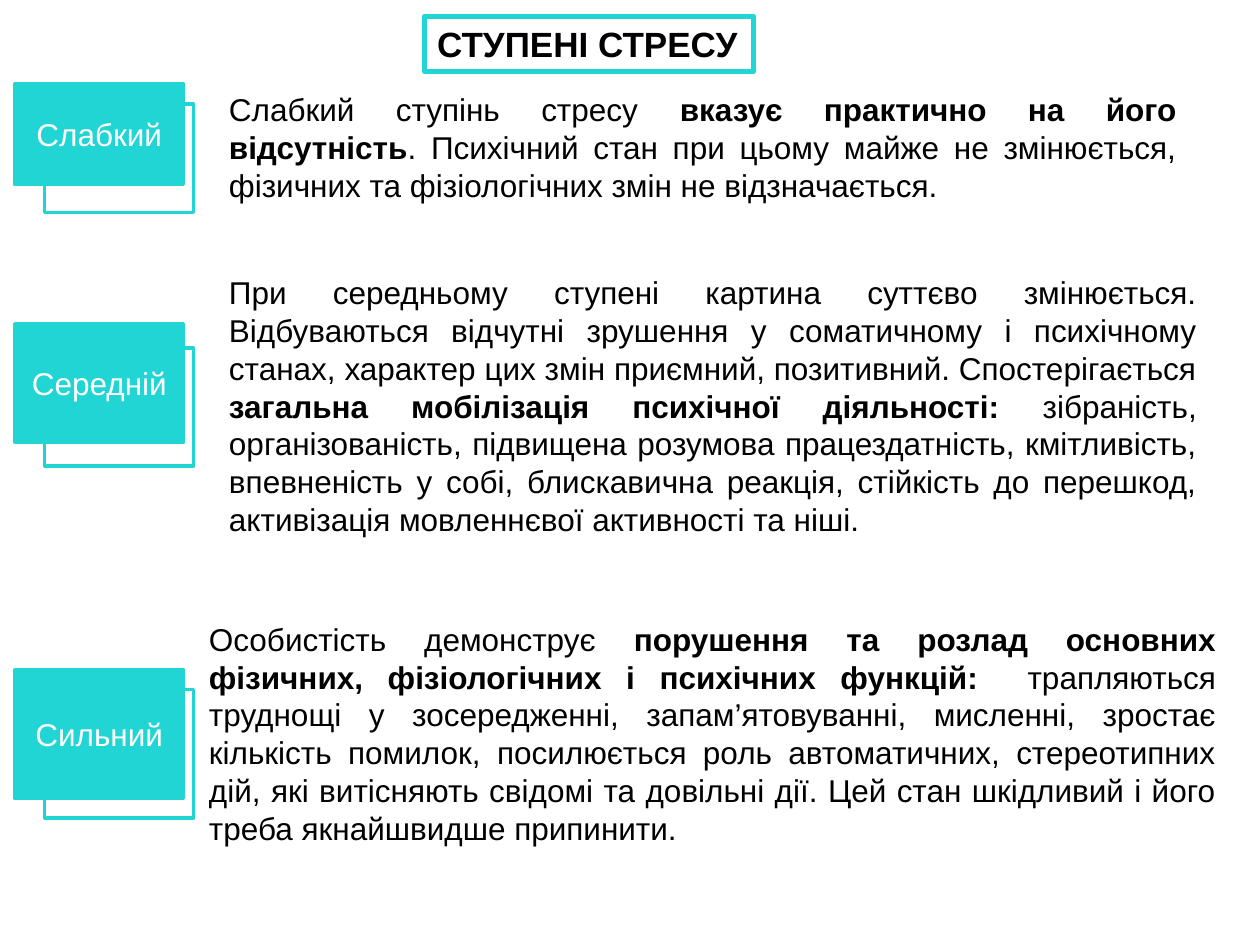
from dataclasses import dataclass

from pptx import Presentation
from pptx.dml.color import RGBColor
from pptx.enum.shapes import MSO_SHAPE
from pptx.enum.text import MSO_ANCHOR, MSO_AUTO_SIZE, PP_ALIGN
from pptx.slide import Slide
from pptx.util import Pt

RECTANGLE = MSO_SHAPE.RECTANGLE
TOP, MIDDLE = MSO_ANCHOR.TOP, MSO_ANCHOR.MIDDLE
LEFT, CENTER, JUSTIFY = PP_ALIGN.LEFT, PP_ALIGN.CENTER, PP_ALIGN.JUSTIFY
NO_FIT, FIT_SHAPE = MSO_AUTO_SIZE.NONE, MSO_AUTO_SIZE.SHAPE_TO_FIT_TEXT

TURQUOISE = RGBColor(0x21, 0xD5, 0xD5)
WHITE = RGBColor(0xFF, 0xFF, 0xFF)
BLACK = RGBColor(0x00, 0x00, 0x00)
FONT = "Arial"
TEXT_SIZE = 18

# Columns shared by all the labels
LABEL_LEFT, LABEL_WIDTH = 8.5, 96.5
FRAME_LEFT, FRAME_WIDTH = 25.5, 85


@dataclass(frozen=True)
class Box:
    left: float
    top: float
    width: float
    height: float

    def lengths(self) -> tuple[Pt, Pt, Pt, Pt]:
        return Pt(self.left), Pt(self.top), Pt(self.width), Pt(self.height)


@dataclass(frozen=True)
class StressLevel:
    name: str
    label_top: float
    label_height: float
    frame_top: float
    frame_height: float
    description_box: Box
    opening: str
    emphasis: str
    closing: str


LEVELS = [
    StressLevel(
        "Слабкий", 48, 57.6, 59.5, 62, Box(123.75, 48, 555.75, 72.7),
        "Слабкий ступінь стресу ",
        "вказує практично на його відсутність",
        ". Психічний стан при цьому майже не змінюється, фізичних та "
        "фізіологічних змін не відзначається.",
    ),
    StressLevel(
        "Середній", 185, 67.7, 198.75, 67.7, Box(123.75, 152.6, 567.25, 159.8),
        "При середньому ступені картина суттєво змінюється. Відбуваються "
        "відчутні зрушення у соматичному і психічному станах, характер цих "
        "змін приємний, позитивний. Спостерігається ",
        "загальна мобілізація психічної діяльності: ",
        "зібраність, організованість, підвищена розумова працездатність, "
        "кмітливість, впевненість у собі, блискавична реакція, стійкість до "
        "перешкод, активізація мовленнєвої активності та ніші.",
    ),
    StressLevel(
        "Сильний", 382.8, 73.5, 394, 73.5, Box(112.3, 350.6, 589.7, 138.2),
        "Особистість демонструє ",
        "порушення та розлад основних фізичних, фізіологічних і психічних функцій: ",
        " трапляються труднощі у зосередженні, запам’ятовуванні, мисленні, "
        "зростає кількість помилок, посилюється роль автоматичних, "
        "стереотипних дій, які витісняють свідомі та довільні дії. Цей стан "
        "шкідливий і його треба якнайшвидше припинити.",
    ),
]


def set_font(paragraph, size: float, color: RGBColor) -> None:
    paragraph.font.name = FONT
    paragraph.font.size = Pt(size)
    paragraph.font.color.rgb = color


def add_heading(slide: Slide, text: str, box: Box) -> None:
    heading = slide.shapes.title
    heading.left, heading.top, heading.width, heading.height = box.lengths()
    heading.line.color.rgb = TURQUOISE
    heading.line.width = Pt(3)
    frame = heading.text_frame
    frame.text = text
    frame.word_wrap = False
    frame.auto_size = NO_FIT
    frame.vertical_anchor = TOP
    paragraph = frame.paragraphs[0]
    paragraph.alignment = LEFT
    set_font(paragraph, 20, BLACK)
    paragraph.font.bold = True


def add_rectangle(slide: Slide, box: Box, fill: RGBColor):
    rectangle = slide.shapes.add_shape(RECTANGLE, *box.lengths())
    rectangle.shadow.inherit = False
    rectangle.fill.solid()
    rectangle.fill.fore_color.rgb = fill
    rectangle.line.color.rgb = TURQUOISE
    rectangle.line.width = Pt(2)
    return rectangle


def add_description(slide: Slide, level: StressLevel) -> None:
    description = slide.shapes.add_textbox(*level.description_box.lengths())
    frame = description.text_frame
    frame.word_wrap = True
    frame.auto_size = FIT_SHAPE
    paragraph = frame.paragraphs[0]
    paragraph.alignment = JUSTIFY
    set_font(paragraph, TEXT_SIZE, BLACK)
    for text, bold in ((level.opening, False), (level.emphasis, True), (level.closing, False)):
        run = paragraph.add_run()
        run.text = text
        run.font.bold = bold


def add_label(slide: Slide, level: StressLevel) -> None:
    # Outlined frame behind the filled label
    add_rectangle(slide, Box(FRAME_LEFT, level.frame_top, FRAME_WIDTH, level.frame_height), WHITE)
    label = add_rectangle(
        slide, Box(LABEL_LEFT, level.label_top, LABEL_WIDTH, level.label_height), TURQUOISE)
    frame = label.text_frame
    frame.text = level.name
    frame.word_wrap = True
    frame.auto_size = NO_FIT
    frame.vertical_anchor = MIDDLE
    paragraph = frame.paragraphs[0]
    paragraph.alignment = CENTER
    set_font(paragraph, TEXT_SIZE, WHITE)


def main() -> None:
    presentation = Presentation()
    presentation.slide_width, presentation.slide_height = Pt(720), Pt(540)
    slide = presentation.slides.add_slide(presentation.slide_layouts.get_by_name("Title Only"))

    add_heading(slide, "СТУПЕНІ СТРЕСУ", Box(242.6, 9.3, 188, 31.5))
    for level in LEVELS:
        add_description(slide, level)
        add_label(slide, level)

    presentation.save("out.pptx")


if __name__ == "__main__":
    main()
